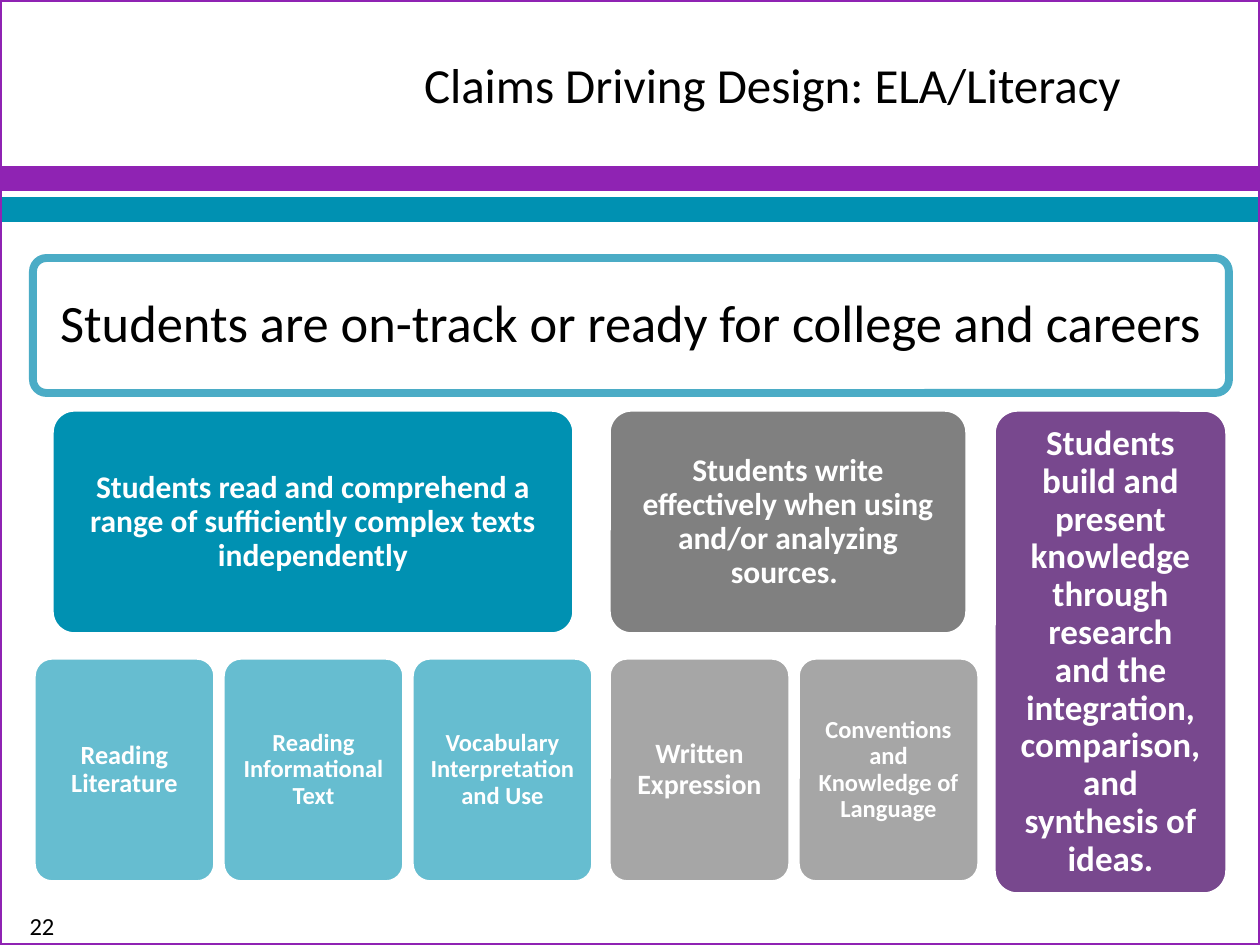
from pptx import Presentation
from pptx.util import Pt
from pptx.dml.color import RGBColor
from pptx.enum.shapes import MSO_SHAPE
from pptx.enum.text import MSO_ANCHOR, MSO_AUTO_SIZE, PP_ALIGN
from lxml import etree

RECT, ROUNDED = MSO_SHAPE.RECTANGLE, MSO_SHAPE.ROUNDED_RECTANGLE
MIDDLE, TOP = MSO_ANCHOR.MIDDLE, MSO_ANCHOR.TOP
CENTER, LEFT = PP_ALIGN.CENTER, PP_ALIGN.LEFT
TITLE_ONLY = 5
EMU_PER_PX = 914400 / 126
WIDTH, HEIGHT = 1260, 945
FONT = "Calibri"
TEAL, PURPLE, WHITE, BLACK = "0091B2", "8F23B3", "FFFFFF", "000000"
DRAWING_NS = "http://schemas.openxmlformats.org/drawingml/2006/main"

TITLE = "Claims Driving Design: ELA/Literacy"
GOAL = "Students are on-track or ready for college and careers "
PAGE_NUMBER = "22"
BANDS = [(168, PURPLE), (199, TEAL)]  # top, colour

# text, (left, top, width, height), fill, text size, margin
CLAIMS = [
    ("Students read and comprehend a range of sufficiently complex texts independently",
     (52, 410, 522, 224), TEAL, 18, 15),
    ("Students write effectively when using and/or analyzing sources. ",
     (609, 410, 358, 224), "808080", 18, 15),
    ("Students build and present knowledge through research and the integration, "
     "comparison, and synthesis of ideas.",
     (994, 410, 233, 484), "78488E", 20, 17),
]

# first left, fill, opacity percent, [(text, text size)]
SUBCLAIM_GROUPS = [
    (34, TEAL, 60, [("Reading Literature", 15),
                    ("Reading Informational Text", 14),
                    ("Vocabulary Interpretation and Use", 14)]),
    (609, "A6A6A6", 100, [("Written Expression", 16),
                          ("Conventions and Knowledge of Language", 14)]),
]
SUBCLAIM_TOP, SUBCLAIM_WIDTH, SUBCLAIM_HEIGHT, SUBCLAIM_GAP = 658, 181, 224, 8


def px(value):
    return round(value * EMU_PER_PX)


def color(hex_string):
    return RGBColor.from_string(hex_string)


def place(shape, area):
    shape.left, shape.top, shape.width, shape.height = map(px, area)


def write(shape, text, size, ink, margins, align=CENTER, anchor=MIDDLE, bold=False):
    frame = shape.text_frame
    frame.text = text
    frame.word_wrap = True
    frame.auto_size = MSO_AUTO_SIZE.NONE
    frame.vertical_anchor = anchor
    frame.margin_left = frame.margin_right = px(margins[0])
    frame.margin_top = frame.margin_bottom = px(margins[1])
    para = frame.paragraphs[0]
    para.alignment = align
    font = para.runs[0].font
    font.name, font.size, font.bold = FONT, Pt(size), bold
    font.color.rgb = color(ink)
    return para


def add_box(slide, kind, area, fill, line, line_width, opacity=100):
    box = slide.shapes.add_shape(kind, *map(px, area))
    box.shadow.inherit = False
    box.line.color.rgb = color(line)
    box.line.width = Pt(line_width)
    if kind == ROUNDED:
        box.adjustments[0] = 0.1
    if fill is None:
        box.fill.background()
        return box
    box.fill.solid()
    box.fill.fore_color.rgb = color(fill)
    if opacity < 100:
        rgb = box.fill._xPr.find(f".//{{{DRAWING_NS}}}srgbClr")
        etree.SubElement(rgb, f"{{{DRAWING_NS}}}alpha", val=str(opacity * 1000))
    return box


def add_card(slide, text, area, fill, size, margin, opacity=100):
    box = add_box(slide, ROUNDED, area, fill, WHITE, 2, opacity)
    write(box, text, size, WHITE, (margin, margin), bold=True).line_spacing = 0.9


def main():
    deck = Presentation()
    deck.slide_width, deck.slide_height = px(WIDTH), px(HEIGHT)
    slide = deck.slides.add_slide(deck.slide_layouts[TITLE_ONLY])

    # Page frame and bands
    for top, fill in BANDS:
        add_box(slide, RECT, (0, top, WIDTH, 21), fill, fill, 2)
    add_box(slide, RECT, (0, 0, WIDTH, HEIGHT), None, PURPLE, 2.25)

    # Title
    title = slide.shapes.title
    place(title, (388, 0, 872, 168))
    para = write(title, TITLE, 28, BLACK, (13, 6), align=LEFT)
    para._p.get_or_add_pPr().set("marL", str(px(23)))

    # Overall goal
    goal = add_box(slide, ROUNDED, (33, 258, 1196, 135), WHITE, "4BACC6", 4.5)
    write(goal, GOAL, 30, BLACK, (19, 19)).line_spacing = 0.9

    # Claims and the subclaims below them
    for text, area, fill, size, margin in CLAIMS:
        add_card(slide, text, area, fill, size, margin)
    for first_left, fill, opacity, subclaims in SUBCLAIM_GROUPS:
        for index, (text, size) in enumerate(subclaims):
            left = first_left + index * (SUBCLAIM_WIDTH + SUBCLAIM_GAP)
            area = (left, SUBCLAIM_TOP, SUBCLAIM_WIDTH, SUBCLAIM_HEIGHT)
            add_card(slide, text, area, fill, size, 13, opacity)

    # Page number
    number = slide.shapes.add_textbox(*map(px, (0, 905, 84, 40)))
    write(number, PAGE_NUMBER, 14, BLACK, (13, 6), anchor=TOP)

    deck.save("out.pptx")


if __name__ == "__main__":
    main()
